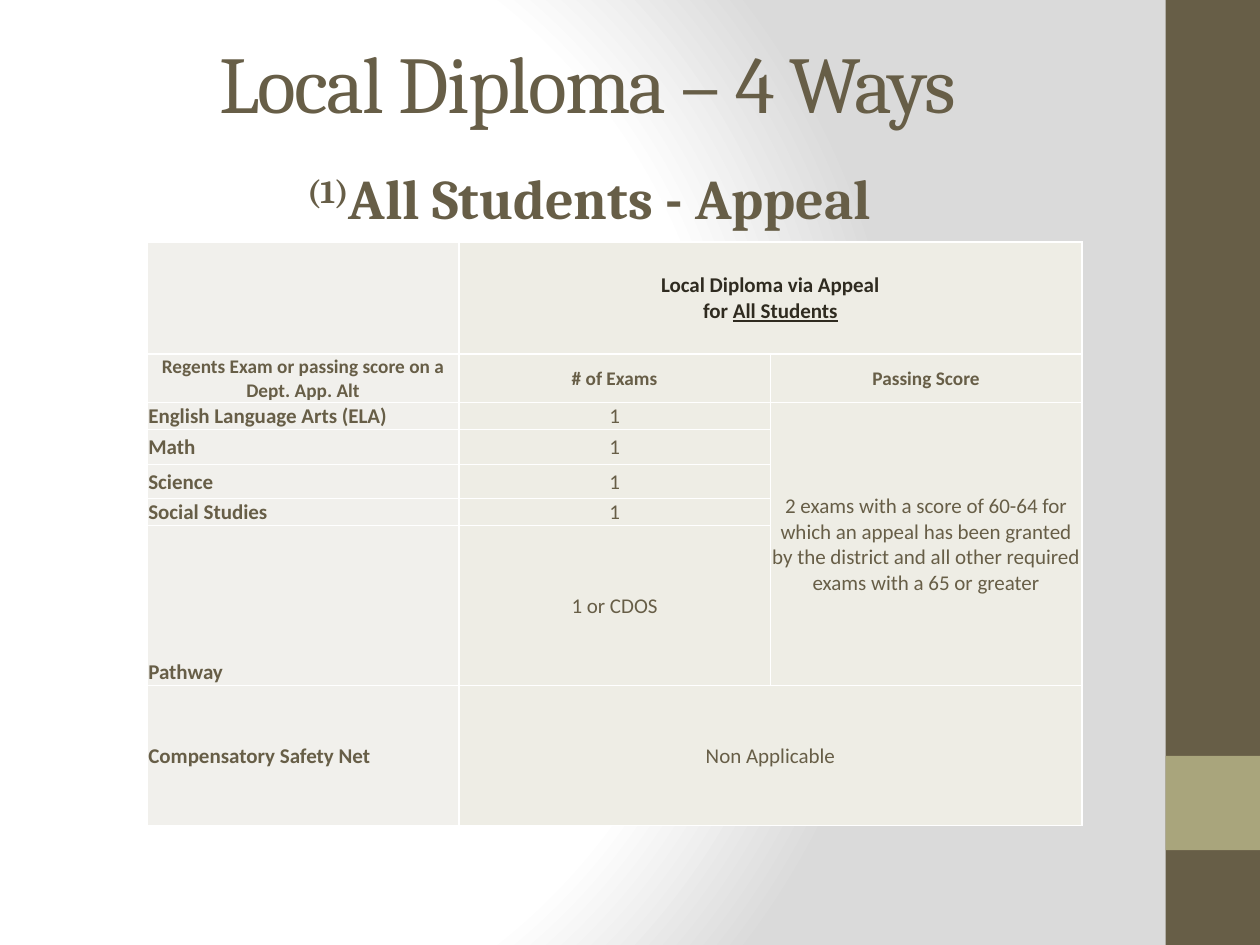
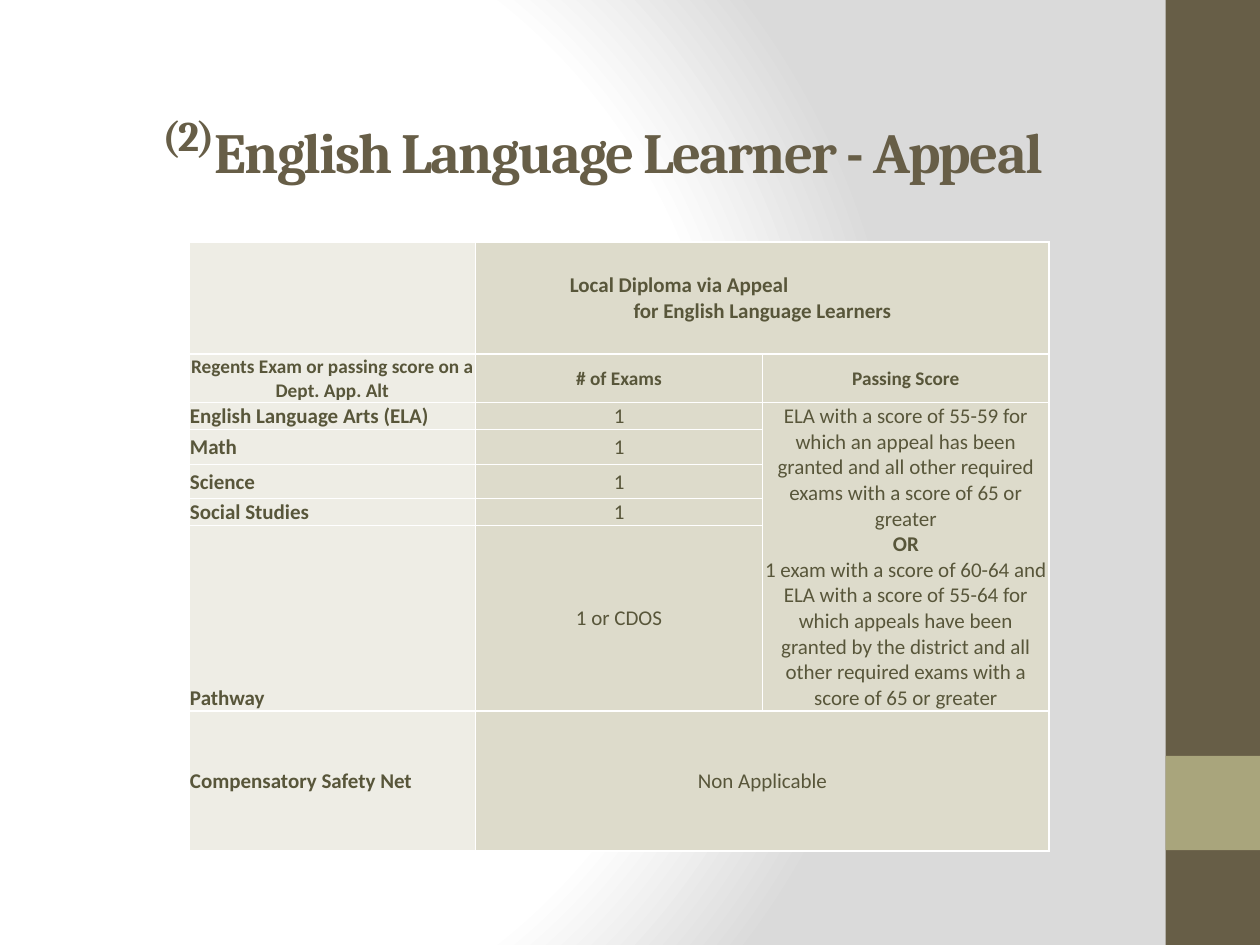
import dataclasses

import lxml.etree
import pptx
import pptx.dml.color
import pptx.enum.shapes
import pptx.enum.text
import pptx.oxml
import pptx.oxml.ns
import pptx.util

Cm = pptx.util.Cm
Pt = pptx.util.Pt
Align = pptx.enum.text.PP_ALIGN
Anchor = pptx.enum.text.MSO_ANCHOR
qn = pptx.oxml.ns.qn

BROWN = "675E47"
OLIVE = "A9A57C"
DARK = "2F2B20"
MOSS = "58563A"
WHITE = "FFFFFF"
GRAY = "DADADA"
HEAD = "Cambria"
BODY = "Calibri"
ROWS = [2.26, 0.84, 0.53, 0.71, 0.69, 0.53, 3.23, 2.82]
EXAMS = [
    ("English Language Arts (ELA)", "1"),
    ("Math", "1"),
    ("Science", "1"),
    ("Social Studies", "1"),
    ("Pathway", "1 or CDOS"),
    ("Compensatory Safety Net", "Non Applicable"),
]
LOW = ("English Language Arts (ELA)", "Pathway")


@dataclasses.dataclass
class Part:
    text: str
    raised: bool = False
    under: bool = False
    size: float = 0


@dataclasses.dataclass
class Look:
    label: str
    value: str
    ink: str
    top: str


def tint(code):
    return pptx.dml.color.RGBColor.from_string(code)


class Deck:
    def __init__(self):
        self.show = pptx.Presentation()
        self.show.slide_width = Cm(25.4)
        self.show.slide_height = Cm(19.05)
        self.slide = None
        self.shade()

    def shade(self):
        master = self.show.slide_master
        master.background.fill.gradient()
        old = master.element.find(".//" + qn("p:bgPr") + "/" + qn("a:gradFill"))
        stops = "".join(
            f'<a:gs pos="{pos}000"><a:srgbClr val="{code}"/></a:gs>'
            for pos, code in ((0, WHITE), (75, WHITE), (100, GRAY))
        )
        new = pptx.oxml.parse_xml(
            f'<a:gradFill {pptx.oxml.ns.nsdecls("a")} rotWithShape="1">'
            f'<a:gsLst>{stops}</a:gsLst><a:path path="circle">'
            '<a:fillToRect l="20000" t="50000" r="100000" b="50000"/>'
            "</a:path></a:gradFill>"
        )
        old.getparent().replace(old, new)

    def page(self):
        self.slide = self.show.slides.add_slide(self.show.slide_layouts[5])
        self.band(0, 19.05, BROWN)
        self.band(15.24, 1.9, OLIVE)

    def band(self, top, height, code):
        shape = self.slide.shapes.add_shape(
            pptx.enum.shapes.MSO_SHAPE.RECTANGLE, Cm(23.5), Cm(top), Cm(1.9), Cm(height)
        )
        shape.shadow.inherit = False
        shape.fill.solid()
        shape.fill.fore_color.rgb = tint(code)
        shape.line.fill.background()

    def put(self, para, parts, size, ink, face=BODY, bold=False, align=Align.CENTER, tight=False):
        para.alignment = align
        font = para.font
        font.name, font.size, font.bold = face, Pt(size), bold
        font.color.rgb = tint(ink)
        for part in parts:
            run = para.add_run()
            run.text = part.text
            if part.size:
                run.font.size = Pt(part.size)
            if part.under:
                run.font.underline = True
            marks = run.font._element
            if part.raised:
                marks.set("baseline", "30000")
            if tight:
                marks.set("spc", "-100")

    def title(self, parts, top, height, size, bold=False, inset=0.25):
        shape = self.slide.shapes.title
        shape.left, shape.top, shape.width, shape.height = Cm(1.27), Cm(top), Cm(21.16), Cm(height)
        frame = shape.text_frame
        frame.auto_size = pptx.enum.text.MSO_AUTO_SIZE.NONE
        frame.vertical_anchor = Anchor.MIDDLE
        frame.margin_left = Cm(inset)
        self.put(frame.paragraphs[0], parts, size, BROWN, HEAD, bold, tight=True)

    def label(self, parts, left, top, width, height, size):
        box = self.slide.shapes.add_textbox(Cm(left), Cm(top), Cm(width), Cm(height))
        box.text_frame.word_wrap = False
        self.put(box.text_frame.paragraphs[0], parts, size, BROWN, HEAD, True)

    def edge(self, cell):
        props = cell._tc.get_or_add_tcPr()
        for side in ("lnL", "lnR", "lnT", "lnB"):
            line = lxml.etree.SubElement(props, qn("a:" + side), w=str(Pt(1)))
            fill = lxml.etree.SubElement(line, qn("a:solidFill"))
            lxml.etree.SubElement(fill, qn("a:srgbClr"), val=WHITE)

    def fill(self, cell, lines, size, ink, bold=False, align=Align.CENTER):
        frame = cell.text_frame
        for num, line in enumerate(lines):
            para = frame.add_paragraph() if num else frame.paragraphs[0]
            parts = [Part(line)] if isinstance(line, str) else line
            self.put(para, parts, size, ink, bold=bold, align=align)

    def table(self, left, width, look, heads, score):
        table = self.slide.shapes.add_table(
            len(ROWS), 3, Cm(left), Cm(4.88), Cm(3 * width), Cm(sum(ROWS))
        ).table
        table.first_row = table.horz_banding = False
        for col in table.columns:
            col.width = Cm(width)
        for row, height in zip(table.rows, ROWS):
            row.height = Cm(height)
            for num, cell in enumerate(row.cells):
                self.edge(cell)
                cell.fill.solid()
                cell.fill.fore_color.rgb = tint(look.value if num else look.label)
                cell.margin_left = cell.margin_top = cell.margin_right = Cm(0.02)
                cell.margin_bottom = 0
                cell.vertical_anchor = Anchor.MIDDLE
        for start, end in (((0, 1), (0, 2)), ((2, 2), (6, 2)), ((7, 1), (7, 2))):
            table.cell(*start).merge(table.cell(*end))

        self.fill(table.cell(0, 1), heads, 12, look.top, True)
        names = ("Regents Exam or passing score on a Dept. App. Alt", "# of Exams", "Passing Score")
        for num, name in enumerate(names):
            self.fill(table.cell(1, num), [name], 11, look.ink, True)
        for num, (name, count) in enumerate(EXAMS, 2):
            cell = table.cell(num, 0)
            self.fill(cell, [name], 12, look.ink, True, Align.LEFT)
            if name in LOW:
                cell.vertical_anchor = Anchor.BOTTOM
            self.fill(table.cell(num, 1), [count], 12, look.ink)
        self.fill(table.cell(2, 2), score, 12, look.ink)
        return table


def main():
    deck = Deck()

    deck.page()
    deck.title([Part("Local Diploma – 4 Ways")], 0.05, 3.18, 46)
    deck.table(
        2.97, 6.28, Look("F1F0EC", "EEEDE5", BROWN, DARK),
        ["Local Diploma via Appeal", [Part("for "), Part("All Students", under=True)]],
        ["2 exams with a score of 60-64 for which an appeal has been granted by the "
         "district and all other required exams with a 65 or greater"],
    )
    deck.label([Part("(1)", raised=True), Part("All Students - Appeal")], 5.66, 3.18, 12.45, 1.63, 32)

    deck.page()
    deck.title(
        [Part("(2)", raised=True, size=41.4), Part("English Language Learner - Appeal")],
        1.9, 2.03, 32.4, True, 0.85,
    )
    table = deck.table(
        3.81, 5.78, Look("EEEDE5", "DDDBCB", MOSS, MOSS),
        ["Local Diploma via Appeal", "for English Language Learners"],
        ["ELA with a score of 55-59 for which an appeal has been granted and all other "
         "required exams with a score of 65 or greater",
         "OR",
         "1 exam with a score of 60-64 and ELA with a score of 55-64 for which appeals have "
         "been granted by the district and all other required exams with a score of 65 or greater"],
    )
    table.cell(2, 2).text_frame.paragraphs[1].font.bold = True
    first = table.cell(0, 1).text_frame.paragraphs[0]
    first.alignment = Align.LEFT
    first._p.get_or_add_pPr().set("marL", str(Cm(1.88)))

    deck.show.save("out.pptx")


if __name__ == "__main__":
    main()
